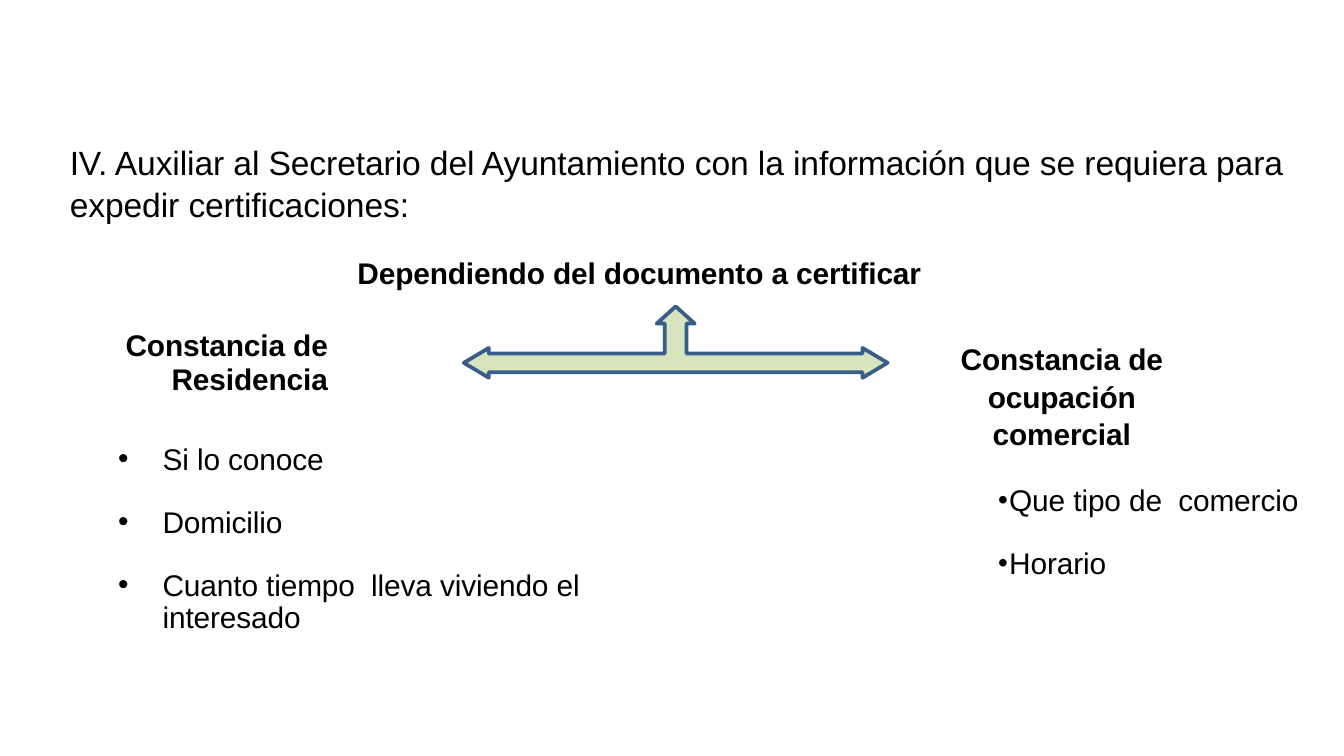
from lxml.etree import SubElement
from pptx import Presentation
from pptx.dml.color import RGBColor as RGB
from pptx.enum.text import PP_ALIGN as Align
from pptx.oxml.ns import qn
from pptx.util import Pt

COLORS = {"text": "000000", "arrow": "D7E4BD", "outline": "385D89"}
FONT = "Arial"

# Content: (left, top, width, height) in points
heading = ("IV. Auxiliar al Secretario del Ayuntamiento con la información "
           "que se requiera para expedir certificaciones:")
condition = "Dependiendo del documento a certificar"
residence = ["Constancia de", "Residencia"]
business = ["Constancia de ocupación comercial"]
residence_items = ["Si lo conoce", "Domicilio",
                   "Cuanto tiempo  lleva viviendo el interesado"]
business_items = ["Que tipo de  comercio", "Horario"]

# Each list: left, first top, width, text indent, bullet offset, bullet size %
RESIDENCE_LIST = (61.9, 236.2, 284, 25.2, -23.8, 100)
BUSINESS_LIST = (534.2, 258.5, 166, 6.5, -6, 94)
ITEM_STEP = 33.9

# Right half of the three-way arrow, as offsets from its centre
ARROW_CENTER = (362, 194.4)
ARROW_HALF = [(0, -30.2), (10.2, -21), (5.8, -21), (5.8, -5), (100.1, -5),
              (100.1, -8), (113.5, 0), (100.1, 8), (100.1, 5)]

deck = Presentation()
deck.slide_width, deck.slide_height = Pt(720), Pt(405)
slide = deck.slides.add_slide(deck.slide_layouts[6])


def add_text(place, lines, size=16, bold=False, align=Align.LEFT,
             spacing=None, bullet=None):
    frame = slide.shapes.add_textbox(*map(Pt, place)).text_frame
    frame.word_wrap = True
    frame.margin_left = frame.margin_right = frame.margin_bottom = 0
    frame.margin_top = Pt(1.6)
    for i, line in enumerate(lines):
        paragraph = frame.paragraphs[0] if i == 0 else frame.add_paragraph()
        paragraph.alignment = align
        if spacing:
            paragraph.line_spacing = spacing
        if bullet:
            indent, offset, percent = bullet
            props = paragraph._p.get_or_add_pPr()
            props.set("marL", str(Pt(indent)))
            props.set("indent", str(Pt(offset)))
            SubElement(props, qn("a:buSzPct"), val=str(percent * 1000))
            SubElement(props, qn("a:buFont"), typeface=FONT)
            SubElement(props, qn("a:buChar"), char="•")
        run = paragraph.add_run()
        run.text = line
        run.font.name, run.font.size, run.font.bold = FONT, Pt(size), bold
        run.font.color.rgb = RGB.from_string(COLORS["text"])
        run._r.get_or_add_rPr().set("spc", "-5")


def add_list(items, layout):
    left, top, width, *bullet = layout
    for i, item in enumerate(items):
        add_text((left, top + i * ITEM_STEP, width, 20), [item],
                 spacing=Pt(17.3), bullet=bullet)


# Heading and condition
add_text((37.4, 73.4, 656.6, 44.6), [heading], size=18, spacing=1.05)
add_text((191.5, 134.6, 344.9, 20.2), [condition], bold=True)

# Two kinds of certificate with their questions
add_text((50.4, 174.2, 125.3, 37.4), residence, bold=True,
         align=Align.RIGHT, spacing=Pt(18.3))
add_text((506.2, 180, 125.3, 59), business, bold=True,
         align=Align.CENTER, spacing=1.05)
add_list(residence_items, RESIDENCE_LIST)
add_list(business_items, BUSINESS_LIST)

# Three-way arrow: the right half and its mirror
outline = ARROW_HALF + [(-x, y) for x, y in reversed(ARROW_HALF[1:])]
points = [(Pt(ARROW_CENTER[0] + x), Pt(ARROW_CENTER[1] + y)) for x, y in outline]
builder = slide.shapes.build_freeform(*points[0])
builder.add_line_segments(points[1:], close=True)
arrow = builder.convert_to_shape()
arrow.shadow.inherit = False
arrow.fill.solid()
arrow.fill.fore_color.rgb = RGB.from_string(COLORS["arrow"])
arrow.line.color.rgb = RGB.from_string(COLORS["outline"])
arrow.line.width = Pt(2)

deck.save("out.pptx")
